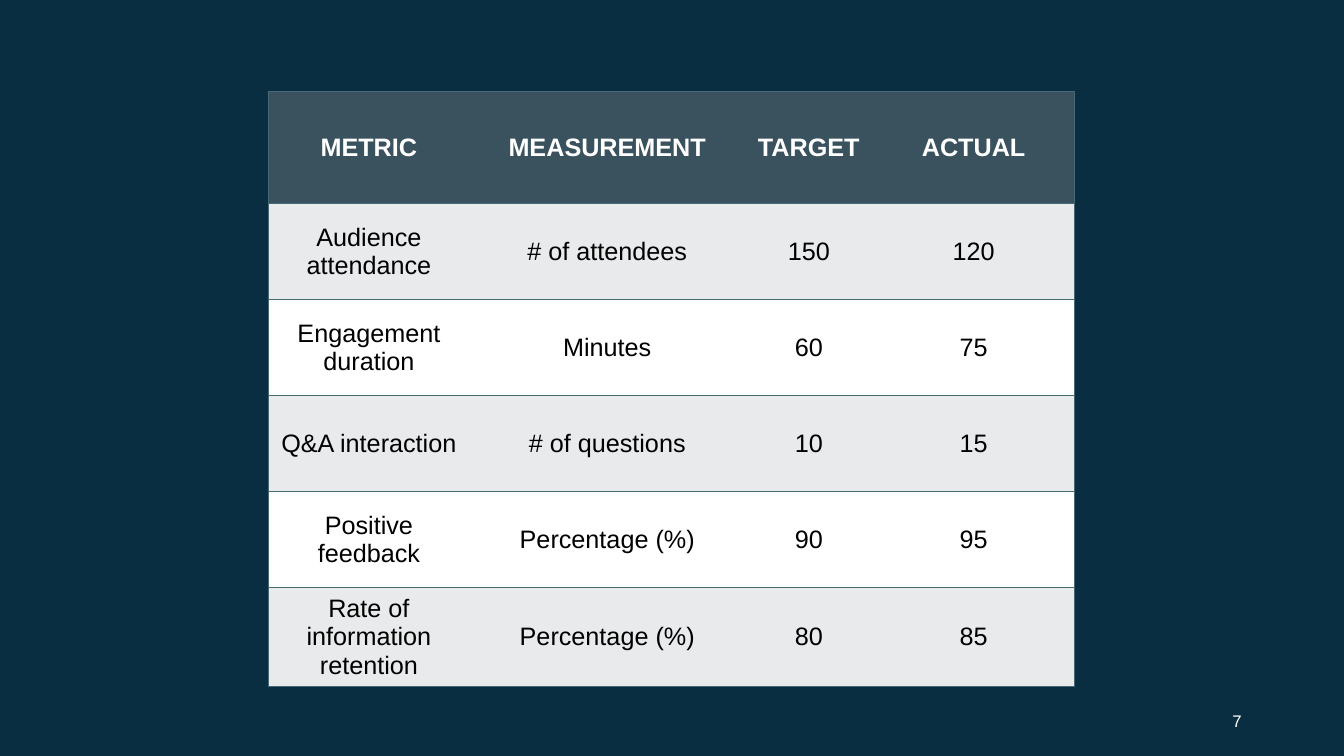
from lxml.etree import SubElement
from pptx import Presentation
from pptx.dml.color import RGBColor
from pptx.enum.shapes import MSO_SHAPE as Shape
from pptx.enum.text import MSO_ANCHOR as Anchor, PP_ALIGN as Align
from pptx.oxml.ns import qn
from pptx.util import Pt

COLORS = {
    "navy": "092E41",
    "outline": "4F5B66",
    "header": "3A525E",
    "rule": "476977",
    "band": "E8EAEB",
    "white": "FFFFFF",
    "black": "000000",
}
METRICS = [
    ["METRIC", "MEASUREMENT", "TARGET", "ACTUAL"],
    ["Audience attendance", "# of attendees", "150", "120"],
    ["Engagement duration", "Minutes", "60", "75"],
    ["Q&A interaction", "# of questions", "10", "15"],
    ["Positive feedback", "Percentage (%)", "90", "95"],
    ["Rate of information retention", "Percentage (%)", "80", "85"],
]
COL_WIDTHS = [144, 196.5, 91.5, 144]
ROW_HEIGHTS = [80] + [68.6] * 4 + [70.4]


def rgb(name):
    return RGBColor.from_string(COLORS[name])


class SlideBuilder:
    def __init__(self, prs, font):
        self.slide = prs.slides.add_slide(prs.slide_layouts[6])
        self.font = font

    def add_run(self, tf, text, color, align, **formats):
        p = tf.paragraphs[0]
        p.alignment = align
        r = p.add_run()
        r.text = text
        r.font.color.rgb = rgb(color)
        for name, value in {"name": self.font, **formats}.items():
            setattr(r.font, name, value)

    def backdrop(self, x, y, w, h):
        sp = self.slide.shapes.add_shape(Shape.RECTANGLE, Pt(x), Pt(y), Pt(w), Pt(h))
        sp.shadow.inherit = False
        sp.fill.solid()
        sp.fill.fore_color.rgb = rgb("navy")
        sp.line.color.rgb = rgb("outline")
        sp.line.width = Pt(2)

    def text(self, x, y, w, h, text, size):
        tf = self.slide.shapes.add_textbox(Pt(x), Pt(y), Pt(w), Pt(h)).text_frame
        tf.word_wrap = True
        tf.vertical_anchor = Anchor.MIDDLE
        self.add_run(tf, text, "white", Align.RIGHT, size=Pt(size))

    def borders(self, cell, ruled_sides):
        """Rule the given sides (letters of LRTB) and clear the others."""
        tc_pr = cell._tc.get_or_add_tcPr()
        for side in "LRTB":
            ln = SubElement(tc_pr, qn(f"a:ln{side}"), w=str(Pt(1)))
            if side in ruled_sides:
                fill = SubElement(ln, qn("a:solidFill"))
                SubElement(fill, qn("a:srgbClr"), val=COLORS["rule"])
            else:
                SubElement(ln, qn("a:noFill"))

    def table(self, x, y, rows, widths, heights, size):
        frame = self.slide.shapes.add_table(
            len(rows), len(widths), Pt(x), Pt(y), Pt(sum(widths)), Pt(sum(heights)))
        table = frame.table
        table.horz_banding = False
        for col, width in zip(table.columns, widths):
            col.width = Pt(width)
        for row, height in zip(table.rows, heights):
            row.height = Pt(height)
        for i, row in enumerate(rows):
            header = i == 0
            fill = "header" if header else "band" if i % 2 else "white"
            for j, text in enumerate(row):
                cell = table.cell(i, j)
                cell.vertical_anchor = Anchor.MIDDLE
                outer = {0: "L", len(row) - 1: "R"}.get(j, "")
                self.borders(cell, "TB" + outer)
                cell.fill.solid()
                cell.fill.fore_color.rgb = rgb(fill)
                self.add_run(cell.text_frame, text, "white" if header else "black",
                             Align.CENTER, size=Pt(size), bold=header)


def main():
    prs = Presentation()
    prs.slide_width, prs.slide_height = Pt(960), Pt(540)
    s = SlideBuilder(prs, "Arial")
    s.backdrop(-15, -8.5, 990, 556.5)
    s.table(191.5, 65.5, METRICS, COL_WIDTHS, ROW_HEIGHTS, size=18)
    s.text(678, 500.5, 216, 29, "7", size=12)
    prs.save("out.pptx")


if __name__ == "__main__":
    main()
